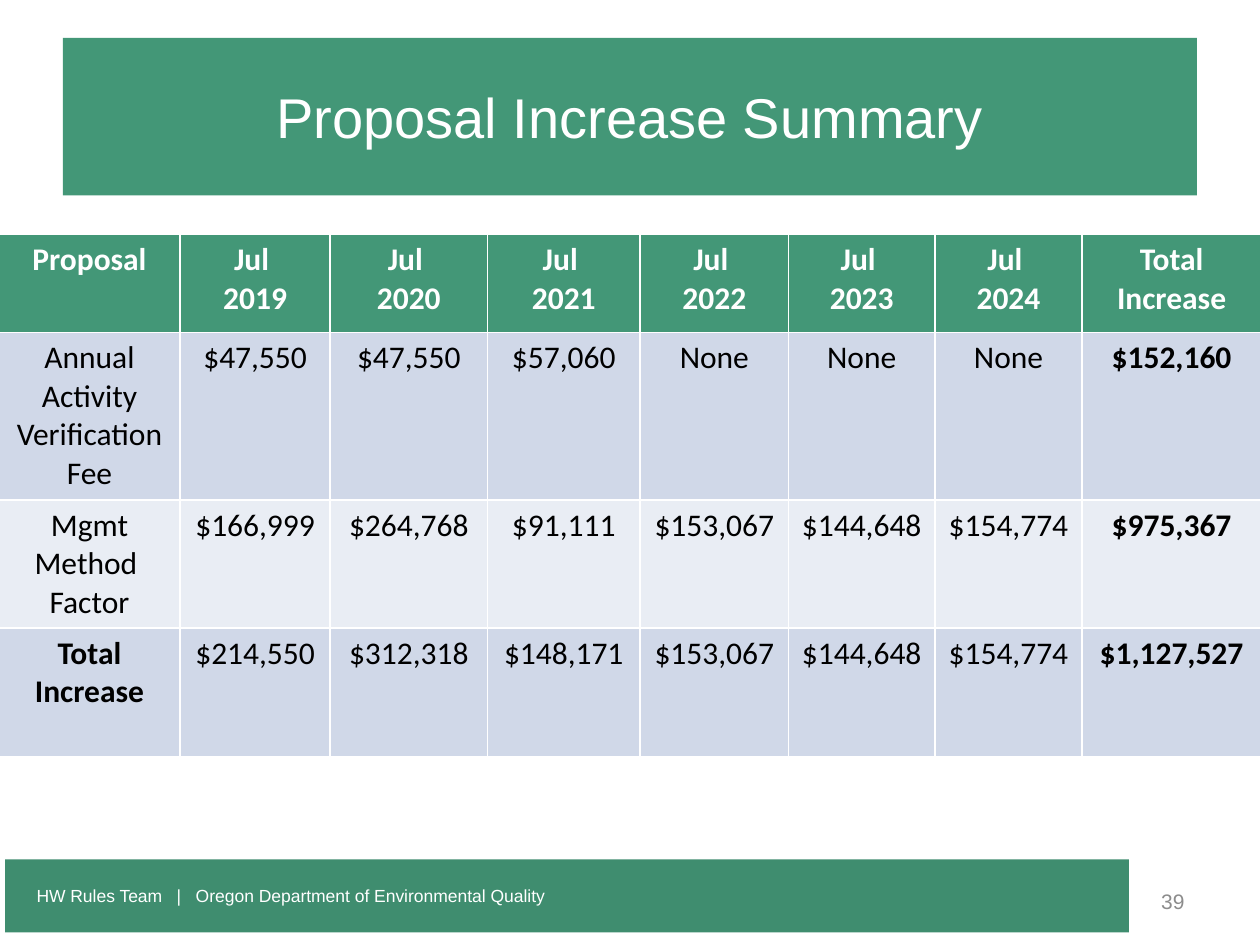
from pptx import Presentation
from pptx.dml.color import RGBColor
from pptx.enum import shapes, text
from pptx.util import Inches, Pt

GREEN, WHITE, BLACK = "439777", "FFFFFF", "000000"
BANDS = ["D0D8E8", "E9EDF4"]


def rgb(value):
    return RGBColor.from_string(value)


def add_run(p, words, size, font, color, align, bold=False):
    p.alignment = align
    r = p.add_run()
    r.text = words
    r.font.size = Pt(size)
    r.font.name = font
    r.font.bold = bold
    r.font.color.rgb = rgb(color)


prs = Presentation()
prs.slide_width, prs.slide_height = Inches(10), Inches(7.5)
s = prs.slides.add_slide(prs.slide_layouts[6])
LEFT, CENTER, RIGHT = text.PP_ALIGN.LEFT, text.PP_ALIGN.CENTER, text.PP_ALIGN.RIGHT

bars = [
    ((0.5, 0.3, 9, 1.25), GREEN, "Proposal Increase Summary", 32, CENTER, 0.1),
    ((0.04, 6.82, 8.92, 0.58), "3F8D6F",
     "HW Rules Team   |   Oregon Department of Environmental Quality", 10, LEFT, 0.25),
]
for box, fill, words, size, align, margin in bars:
    sp = s.shapes.add_shape(shapes.MSO_SHAPE.RECTANGLE, *map(Inches, box))
    sp.shadow.inherit = False
    sp.fill.solid()
    sp.fill.fore_color.rgb = rgb(fill)
    sp.line.fill.background()
    tf = sp.text_frame
    tf.word_wrap = True
    tf.margin_left = Inches(margin)
    tf.vertical_anchor = text.MSO_ANCHOR.MIDDLE
    add_run(tf.paragraphs[0], words, size, "Arial", WHITE, align)

widths = [1.44, 1.19, 1.25, 1.21, 1.18, 1.16, 1.17, 1.42]
heights = [0.78, 1.33, 1, 1.02]
rows = [
    ["Proposal"] + [f"Jul \n{year}" for year in range(2019, 2025)] + ["Total Increase"],
    ["Annual Activity Verification Fee", "$47,550", "$47,550", "$57,060",
     "None", "None", "None", "$152,160"],
    ["Mgmt Method  Factor", "$166,999", "$264,768", "$91,111",
     "$153,067", "$144,648", "$154,774", "$975,367"],
    ["Total Increase", "$214,550", "$312,318", "$148,171",
     "$153,067", "$144,648", "$154,774", "$1,127,527"],
]
table = s.shapes.add_table(len(rows), len(widths), Inches(-0.01), Inches(1.86),
                           Inches(sum(widths)), Inches(sum(heights))).table
for column, width in zip(table.columns, widths):
    column.width = Inches(width)
for i, (values, height) in enumerate(zip(rows, heights)):
    table.rows[i].height = Inches(height)
    header = i == 0
    for j, value in enumerate(values):
        cell = table.cell(i, j)
        cell.fill.solid()
        cell.fill.fore_color.rgb = rgb(GREEN if header else BANDS[(i - 1) % 2])
        bold = header or j == len(widths) - 1 or (i == len(rows) - 1 and j == 0)
        tf = cell.text_frame
        for n, line in enumerate(value.split("\n")):
            p = tf.add_paragraph() if n else tf.paragraphs[0]
            add_run(p, line, 18, "Calibri", WHITE if header else BLACK, CENTER, bold)

number = s.shapes.add_textbox(Inches(7.17), Inches(6.95), Inches(2.33), Inches(0.4))
tf = number.text_frame
tf.word_wrap = True
tf.vertical_anchor = text.MSO_ANCHOR.MIDDLE
add_run(tf.paragraphs[0], "39", 12, "Arial", "8C8C8C", RIGHT)

prs.save("out.pptx")
